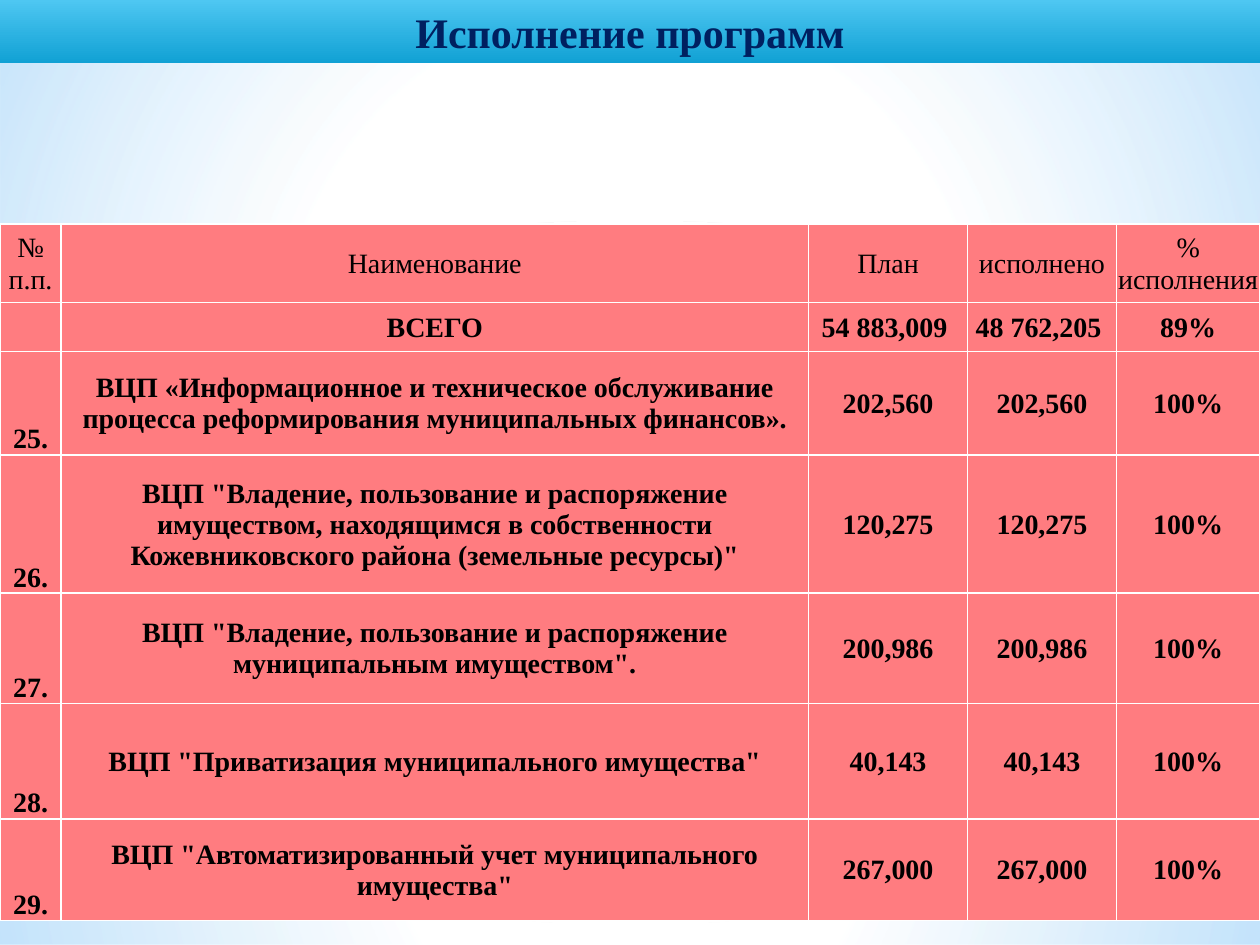
import pptx
import pptx.dml.color
import pptx.enum.shapes
import pptx.enum.text
import pptx.oxml
import pptx.oxml.ns
import pptx.util

Pt = pptx.util.Pt
RGB = pptx.dml.color.RGBColor.from_string
ALIGN = pptx.enum.text.PP_ALIGN
ANCHOR = pptx.enum.text.MSO_ANCHOR
SHAPE = pptx.enum.shapes.MSO_SHAPE

TITLE = "Исполнение программ"
HEADER = ("№ п.п.", "Наименование", "План", "исполнено", "% исполнения")
TOTAL = ("", "ВСЕГО", "54 883,009 ", "48 762,205 ", "89%")
PROGRAMS = [
    ("ВЦП «Информационное и техническое обслуживание процесса реформирования "
     "муниципальных финансов».", "202,560"),
    ('ВЦП "Владение, пользование и распоряжение имуществом, находящимся в собственности '
     'Кожевниковского района (земельные ресурсы)"', "120,275"),
    ('ВЦП "Владение, пользование и распоряжение муниципальным имуществом".', "200,986"),
    ('ВЦП "Приватизация муниципального имущества"', "40,143"),
    ('ВЦП "Автоматизированный учет муниципального имущества"', "267,000"),
]
FIRST_NUMBER = 25
COL_WIDTHS = (35, 427, 91, 85, 82)
ROW_HEIGHTS = (45, 28, 59, 79, 63, 66, 58)
TABLE_TOP = 128
WIDTH, HEIGHT = 720, 540

THEME = {
    "font": "Times New Roman",
    "title_size": 24,
    "cell_size": 16,
    "title": "002060",
    "text": "000000",
    "cell": "FF7C80",
    "border": "FFFFFF",
    "banner": [(0, "4EC7F2", 100), (100, "11A1D4", 100)],
    "glow_low": [(0, "FFFFFF", 91), (37, "FFFFFF", 76), (100, "B4DCFA", 79)],
    "glow_high": [(0, "FFFFFF", 89), (48, "FFFFFF", 62), (100, "B4DCFA", 79)],
    "haze": [(0, "FFFFFF", 0), (29, "FFFFFF", 30), (45, "B4DCFA", 40),
             (55, "FFFFFF", 26), (65, "B4DCFA", 60), (100, "FFFFFF", 0)],
    "halo": [(0, "FFFFFF", 100), (56, "FFFFFF", 0)],
}
RADIAL = ('<a:path path="circle"><a:fillToRect l="50000" t="50000" r="50000" b="50000"/>'
          '</a:path>')
VERTICAL = '<a:lin ang="5400000" scaled="0"/>'
BACKDROP = [
    (SHAPE.RECTANGLE, 402, 138, "glow_low", RADIAL),
    (SHAPE.RECTANGLE, 0, 402, "glow_high", RADIAL),
    (SHAPE.RECTANGLE, 297, 180, "haze", VERTICAL),
    (SHAPE.OVAL, 126, 402, "halo", RADIAL),
]
NS = pptx.oxml.ns.nsdecls("a")


def fill_gradient(sp, stops, direction):
    gs = "".join(
        f'<a:gs pos="{pos * 1000}"><a:srgbClr val="{color}">'
        f'<a:alpha val="{alpha * 1000}"/></a:srgbClr></a:gs>'
        for pos, color, alpha in stops)
    grad = pptx.oxml.parse_xml(
        f'<a:gradFill {NS} rotWithShape="1"><a:gsLst>{gs}</a:gsLst>{direction}</a:gradFill>')
    sp.fill.background()
    spPr = sp.element.spPr
    spPr.replace(spPr.find(pptx.oxml.ns.qn("a:noFill")), grad)


def style_paragraph(p, size, color, bold):
    p.alignment = ALIGN.CENTER
    p.font.name = THEME["font"]
    p.font.size = Pt(size)
    p.font.bold = bold
    p.font.color.rgb = RGB(color)


def add_backdrop(slide):
    for kind, top, height, stops, direction in BACKDROP:
        sp = slide.shapes.add_shape(kind, 0, Pt(top), Pt(WIDTH), Pt(height))
        sp.shadow.inherit = False
        sp.line.fill.background()
        fill_gradient(sp, THEME[stops], direction)


def add_borders(cell):
    tcPr = cell._tc.get_or_add_tcPr()
    for i, side in enumerate("LRTB"):
        tcPr.insert(i, pptx.oxml.parse_xml(
            f'<a:ln{side} {NS} w="12700"><a:solidFill><a:srgbClr val="{THEME["border"]}"/>'
            f'</a:solidFill></a:ln{side}>'))


def add_program_table(slide):
    rows = [HEADER, TOTAL]
    for number, (name, amount) in enumerate(PROGRAMS, FIRST_NUMBER):
        rows.append((f"{number}.", name, amount, amount, "100%"))
    table = slide.shapes.add_table(
        len(rows), len(HEADER), 0, Pt(TABLE_TOP), Pt(WIDTH), Pt(sum(ROW_HEIGHTS))).table
    for column, width in zip(table.columns, COL_WIDTHS):
        column.width = Pt(width)
    for r, (values, height) in enumerate(zip(rows, ROW_HEIGHTS)):
        table.rows[r].height = Pt(height)
        for c, value in enumerate(values):
            cell = table.cell(r, c)
            cell.text = value
            cell.margin_left = cell.margin_right = cell.margin_top = Pt(0.72)
            cell.margin_bottom = 0
            cell.vertical_anchor = ANCHOR.BOTTOM if r > 1 and c == 0 else ANCHOR.MIDDLE
            cell.fill.solid()
            cell.fill.fore_color.rgb = RGB(THEME["cell"])
            style_paragraph(cell.text_frame.paragraphs[0], THEME["cell_size"],
                            THEME["text"], r > 0)
            add_borders(cell)


def add_title(slide):
    sp = slide.shapes.title
    sp.left, sp.top, sp.width, sp.height = 0, 0, Pt(WIDTH), Pt(36)
    fill_gradient(sp, THEME["banner"], VERTICAL)
    tf = sp.text_frame
    tf.text = TITLE
    tf.word_wrap = True
    tf.auto_size = pptx.enum.text.MSO_AUTO_SIZE.NONE
    tf.vertical_anchor = ANCHOR.MIDDLE
    style_paragraph(tf.paragraphs[0], THEME["title_size"], THEME["title"], True)
    sp.element.getparent().append(sp.element)


def main():
    prs = pptx.Presentation()
    prs.slide_width, prs.slide_height = Pt(WIDTH), Pt(HEIGHT)
    slide = prs.slides.add_slide(prs.slide_layouts[5])
    add_backdrop(slide)
    add_program_table(slide)
    add_title(slide)
    prs.save("out.pptx")


if __name__ == "__main__":
    main()
